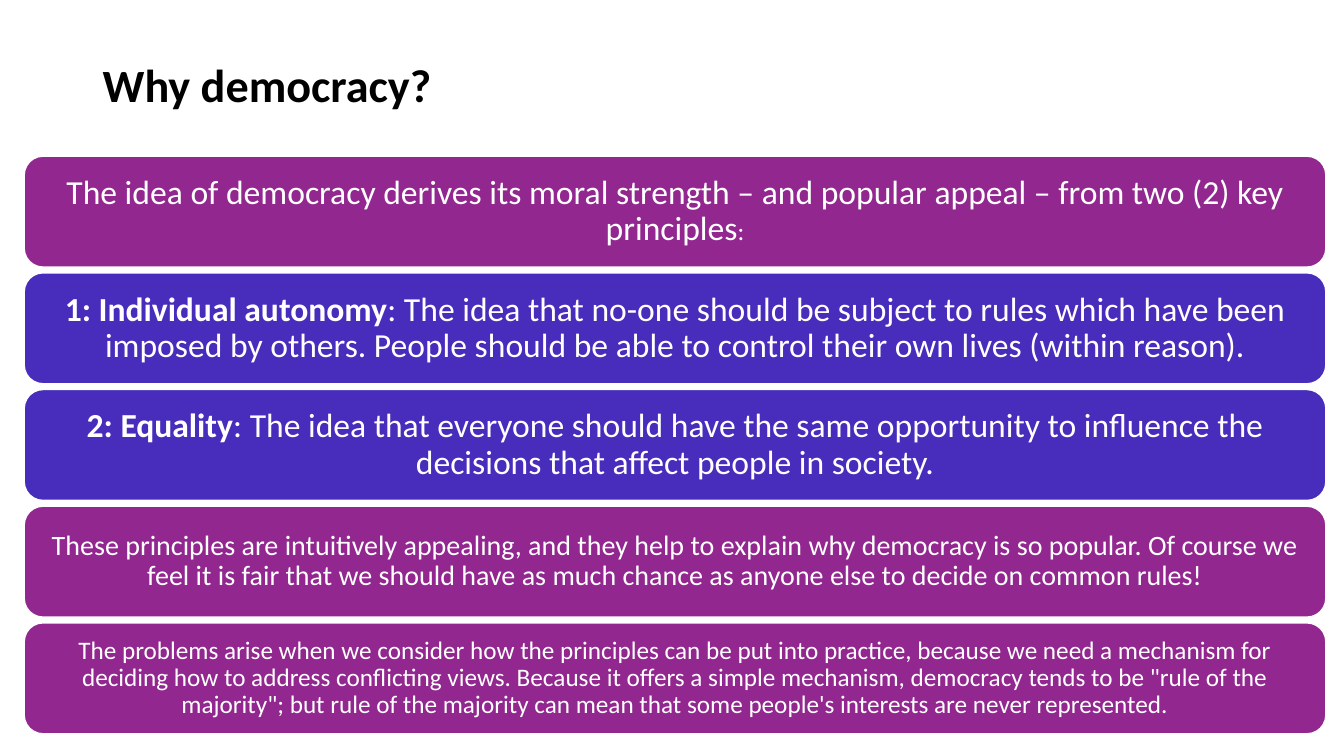
from pptx import Presentation
from pptx.dml.color import RGBColor
from pptx.enum.shapes import MSO_SHAPE
from pptx.enum.text import MSO_ANCHOR, PP_ALIGN
from pptx.util import Inches, Pt

ROUNDED = MSO_SHAPE.ROUNDED_RECTANGLE
TOP, MIDDLE = MSO_ANCHOR.TOP, MSO_ANCHOR.MIDDLE
LEFT, CENTER = PP_ALIGN.LEFT, PP_ALIGN.CENTER

BLACK = RGBColor(0x00, 0x00, 0x00)
WHITE = RGBColor(0xFF, 0xFF, 0xFF)
PURPLE = RGBColor(0x92, 0x27, 0x8F)
INDIGO = RGBColor(0x48, 0x2C, 0xBC)

FONT = "Calibri"
BAR_LEFT, BAR_WIDTH, BAR_HEIGHT = 0.24, 12.91, 1.1
FIRST_TOP, LAST_TOP = 1.55, 6.18
CORNER = 0.17

BARS = [
    (PURPLE, 0.1, [
        ("The idea of democracy derives its moral strength – and popular appeal – "
         "from two (2) key principles", 24, False),
        (":", 18, False)]),
    (INDIGO, 0.1, [
        ("1: Individual autonomy", 24, True),
        (": The idea that no-one should be subject to rules which have been imposed "
         "by others. People should be able to control their own lives (within reason).",
         24, False)]),
    (INDIGO, 0.1, [
        ("2: Equality", 24, True),
        (": The idea that everyone should have the same opportunity to influence the "
         "decisions that affect people in society.", 24, False)]),
    (PURPLE, 0.09, [
        ("These principles are intuitively appealing, and they help to explain why "
         "democracy is so popular. Of course we feel it is fair that we should have "
         "as much chance as anyone else to decide on common rules!", 20, False)]),
    (PURPLE, 0.08, [
        ("The problems arise when we consider how the principles can be put into "
         "practice, because we need a mechanism for deciding how to address "
         "conflicting views. Because it offers a simple mechanism, democracy tends "
         "to be \"rule of the majority\"; but rule of the majority can mean that "
         "some people's interests are never represented.", 18, False)]),
]


def set_attributes(target, values):
    for name, value in values.items():
        setattr(target, name, value)


def write_text(sp, runs, color, align, frame):
    tf = sp.text_frame
    set_attributes(tf, {"word_wrap": True, **frame})
    p = tf.paragraphs[0]
    set_attributes(p, {"alignment": align, "line_spacing": 0.9})
    for text, size, bold in runs:
        r = p.add_run()
        r.text = text
        set_attributes(r.font, {"name": FONT, "size": Pt(size), "bold": bold})
        r.font.color.rgb = color


def add_title(s, text):
    sp = s.shapes.add_textbox(Inches(0.92), Inches(0.4), Inches(11.5), Inches(1.45))
    write_text(sp, [(text, 33, True)], BLACK, LEFT,
               {"vertical_anchor": TOP, "margin_top": Inches(0.22)})


def add_bar(s, top, fill, inset, runs):
    sp = s.shapes.add_shape(ROUNDED, Inches(BAR_LEFT), Inches(top),
                            Inches(BAR_WIDTH), Inches(BAR_HEIGHT))
    sp.adjustments[0] = CORNER
    sp.shadow.inherit = False
    sp.fill.solid()
    sp.fill.fore_color.rgb = fill
    sp.line.color.rgb = WHITE
    sp.line.width = Pt(1)
    sides = ("left", "top", "right", "bottom")
    margins = {f"margin_{side}": Inches(inset) for side in sides}
    write_text(sp, runs, WHITE, CENTER, {"vertical_anchor": MIDDLE, **margins})


def main():
    prs = Presentation()
    prs.slide_width, prs.slide_height = Inches(13.33), Inches(7.5)
    s = prs.slides.add_slide(prs.slide_layouts[6])
    add_title(s, "Why democracy?")
    pitch = (LAST_TOP - FIRST_TOP) / (len(BARS) - 1)
    for i, (fill, inset, runs) in enumerate(BARS):
        add_bar(s, FIRST_TOP + i * pitch, fill, inset, runs)
    prs.save("out.pptx")


if __name__ == "__main__":
    main()
